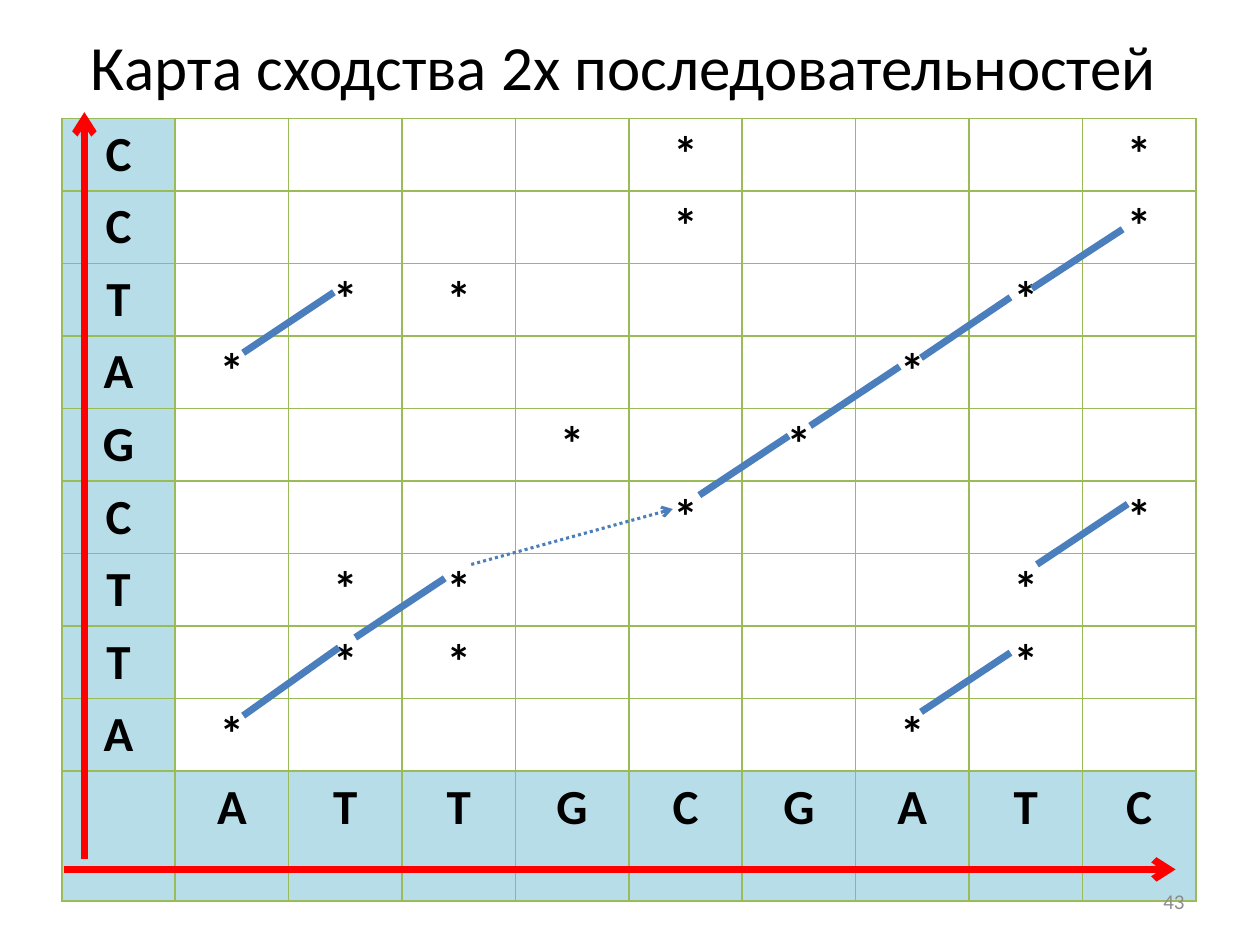
from dataclasses import dataclass

import pptx
import pptx.dml.color
import pptx.enum.dml
import pptx.enum.shapes
import pptx.enum.text
import pptx.oxml
import pptx.oxml.ns
import pptx.util
from pptx.util import Inches


@dataclass(frozen=True)
class Theme:
    font: str = "Calibri"
    ink: str = "000000"
    muted: str = "8C8C8C"
    paper: str = "FFFFFF"
    header: str = "B7DEE8"
    grid: str = "9BBB59"
    match: str = "4B7EBC"
    axis: str = "FF0000"
    title_size: float = 36
    cell_size: float = 28
    number_size: float = 12
    line_width: float = 4
    jump_width: float = 1.75
    grid_width: float = 1


THEME = Theme()
ALIGN = pptx.enum.text.PP_ALIGN
ANCHOR = pptx.enum.text.MSO_ANCHOR
ROW_LETTERS = "CCTAGCTTA"
COLUMN_LETTERS = "ATTGCGATC"
DIAGONALS = [
    (1.44, 4.74, 2.2, 4.2),
    (2.33, 4.12, 3.04, 3.65),
    (5.06, 2.99, 5.77, 2.52),
    (5.94, 2.44, 6.65, 1.97),
    (6.82, 1.9, 7.53, 1.42),
    (7.7, 1.35, 8.42, 0.88),
    (1.44, 1.86, 2.16, 1.38),
    (6.82, 4.71, 7.53, 4.24),
    (7.74, 3.54, 8.46, 3.06),
]
AXES = [(0.02, 5.96, 8.84, 5.96), (0.18, 5.88, 0.18, -0.05)]
JUMP = (3.25, 3.54, 4.85, 3.1)


def rgb(color):
    return pptx.dml.color.RGBColor.from_string(color)


def xml(tag, body=""):
    ns = pptx.oxml.ns.nsdecls("a")
    return pptx.oxml.parse_xml(f"<a:{tag} {ns}>{body}</a:{tag.split()[0]}>")


def write(tf, text, size, color, align, bold=False):
    tf.text = text
    p = tf.paragraphs[0]
    p.alignment = align
    for r in p.runs:
        r.font.name = THEME.font
        r.font.size = pptx.util.Pt(size)
        r.font.bold = bold
        r.font.color.rgb = rgb(color)


def add_title(s, left, top, width, height):
    sp = s.shapes.title
    sp.left, sp.top = Inches(left), Inches(top)
    sp.width, sp.height = Inches(width), Inches(height)
    tf = sp.text_frame
    tf.vertical_anchor = ANCHOR.MIDDLE
    write(tf, "Карта сходства 2х последовательностей",
          THEME.title_size, THEME.ink, ALIGN.CENTER)


def format_cell(cell, text, fill):
    for side in "LRTB":
        width = pptx.util.Pt(THEME.grid_width)
        cell._tc.get_or_add_tcPr().append(xml(
            f'ln{side} w="{width}"',
            f'<a:solidFill><a:srgbClr val="{THEME.grid}"/></a:solidFill>'))
    cell.fill.solid()
    cell.fill.fore_color.rgb = rgb(fill)
    if text:
        write(cell.text_frame, text, THEME.cell_size, THEME.ink, ALIGN.CENTER, True)


def add_match_table(s, left, top, width, height, last_height):
    rows, cols = len(ROW_LETTERS) + 1, len(COLUMN_LETTERS) + 1
    table = s.shapes.add_table(rows, cols, Inches(left), Inches(top),
                               Inches(width), Inches(height)).table
    table.first_row = table.horz_banding = False
    for column in table.columns:
        column.width = Inches(width / cols)
    for row in table.rows:
        row.height = Inches((height - last_height) / (rows - 1))
    table.rows[rows - 1].height = Inches(last_height)
    for i, row_letter in enumerate(ROW_LETTERS + " "):
        for j, column_letter in enumerate(" " + COLUMN_LETTERS):
            if j == 0:
                text, fill = row_letter.strip(), THEME.header
            elif i == rows - 1:
                text, fill = column_letter, THEME.header
            else:
                text = "*" if row_letter == column_letter else ""
                fill = THEME.paper
            format_cell(table.cell(i, j), text, fill)


def add_line(s, left, top, ends, color, width, arrow=False, dash=None):
    x1, y1, x2, y2 = ends
    sp = s.shapes.add_connector(
        pptx.enum.shapes.MSO_CONNECTOR.STRAIGHT,
        Inches(left + x1), Inches(top + y1), Inches(left + x2), Inches(top + y2))
    sp.line.color.rgb = rgb(color)
    sp.line.width = pptx.util.Pt(width)
    if dash:
        sp.line.dash_style = dash
    if arrow:
        sp.line._get_or_add_ln().append(xml('tailEnd type="arrow"'))
    sp._element.spPr.append(xml("effectLst"))


def add_overlay(s, left, top):
    for ends in DIAGONALS:
        add_line(s, left, top, ends, THEME.match, THEME.line_width)
    for ends in AXES:
        add_line(s, left, top, ends, THEME.axis, THEME.line_width, arrow=True)
    add_line(s, left, top, JUMP, THEME.match, THEME.jump_width, arrow=True,
             dash=pptx.enum.dml.MSO_LINE.ROUND_DOT)


def add_number(s, left, top, width, height):
    sp = s.shapes.add_textbox(Inches(left), Inches(top), Inches(width), Inches(height))
    tf = sp.text_frame
    tf.word_wrap = True
    tf.vertical_anchor = ANCHOR.MIDDLE
    write(tf, "43", THEME.number_size, THEME.muted, ALIGN.RIGHT)


def main():
    prs = pptx.Presentation()
    prs.slide_width, prs.slide_height = Inches(10), Inches(7.5)
    s = prs.slides.add_slide(prs.slide_layouts[5])
    add_title(s, 0.45, 0.14, 9, 0.76)
    add_match_table(s, 0.49, 0.94, 9, 6.21, 1.03)
    add_number(s, 7.17, 6.95, 2.33, 0.4)
    add_overlay(s, 0.49, 0.94)
    prs.save("out.pptx")


if __name__ == "__main__":
    main()
